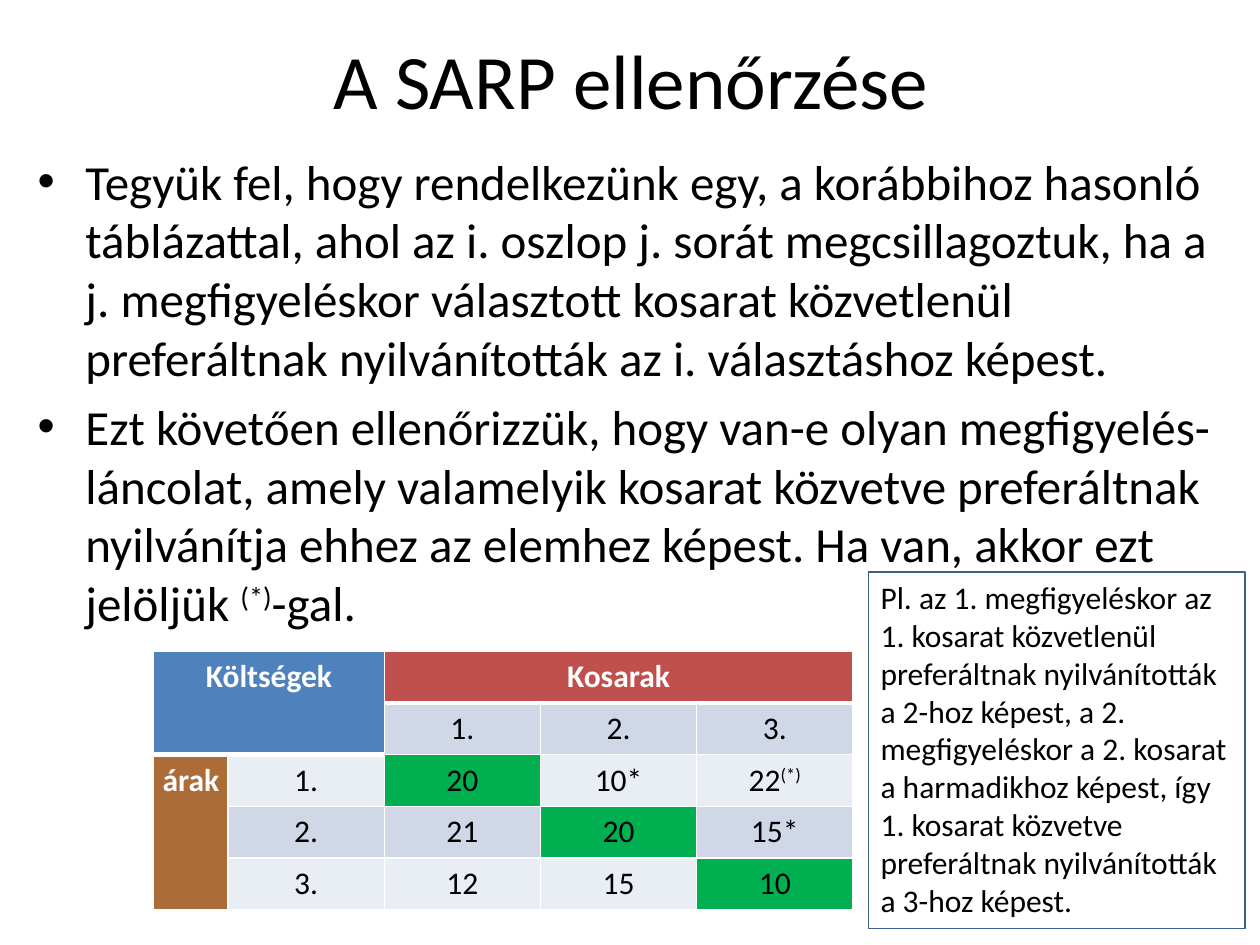
from lxml import etree
from pptx import Presentation
from pptx.dml.color import RGBColor
from pptx.enum.shapes import MSO_SHAPE
from pptx.enum.text import MSO_ANCHOR, PP_ALIGN
from pptx.oxml.ns import qn
from pptx.util import Inches, Pt

RECTANGLE = MSO_SHAPE.RECTANGLE
TOP, MIDDLE = MSO_ANCHOR.TOP, MSO_ANCHOR.MIDDLE
LEFT, CENTER = PP_ALIGN.LEFT, PP_ALIGN.CENTER

FONT = "Calibri"
BLACK = RGBColor(0x00, 0x00, 0x00)
WHITE = RGBColor(0xFF, 0xFF, 0xFF)
BLUE = RGBColor(0x4F, 0x81, 0xBD)
RED = RGBColor(0xC0, 0x50, 0x4D)
BROWN = RGBColor(0x98, 0x48, 0x07)
GREEN = RGBColor(0x00, 0xB0, 0x50)
BANDS = (RGBColor(0xE9, 0xED, 0xF4), RGBColor(0xD0, 0xD8, 0xE8))
NOTE_LINE = RGBColor(0x3A, 0x5F, 0x8C)

INDIRECT = "(*)"
TITLE = "A SARP ellenőrzése"
BULLETS = (
    "Tegyük fel, hogy rendelkezünk egy, a korábbihoz hasonló táblázattal, ahol az "
    "i. oszlop j. sorát megcsillagoztuk, ha a j. megfigyeléskor választott kosarat "
    "közvetlenül preferáltnak nyilvánították az i. választáshoz képest.",
    "Ezt követően ellenőrizzük, hogy van-e olyan megfigyelés-láncolat, amely "
    "valamelyik kosarat közvetve preferáltnak nyilvánítja ehhez az elemhez képest. "
    "Ha van, akkor ezt jelöljük (*)-gal.",
)
NOTE = (
    "Pl. az 1. megfigyeléskor az 1. kosarat közvetlenül preferáltnak nyilvánították "
    "a 2-hoz képest, a 2. megfigyeléskor a 2. kosarat a harmadikhoz képest, így "
    "1. kosarat közvetve preferáltnak nyilvánították a 3-hoz képest."
)
COSTS = (
    ("Költségek", "", "Kosarak", "", ""),
    ("", "", "1.", "2.", "3."),
    ("árak", "1.", "20", "10*", "22(*)"),
    ("", "2.", "21", "20", "15*"),
    ("", "3.", "12", "15", "10"),
)
COL_WIDTHS = (0.59, 1.24, 1.24, 1.24, 1.24)
ROW_HEIGHT = 0.41


def write(p, text, size, color=BLACK, bold=False, align=LEFT):
    """Fill a paragraph, raising the indirect preference mark."""
    p.alignment = align
    for part in text.partition(INDIRECT):
        if not part:
            continue
        r = p.add_run()
        r.text = part
        r.font.name, r.font.size, r.font.bold = FONT, Pt(size), bold
        r.font.color.rgb = color
        if part == INDIRECT:
            r.font._element.set("baseline", "30000")


def add_text_box(slide, box, anchor=TOP):
    tf = slide.shapes.add_textbox(*map(Inches, box)).text_frame
    tf.word_wrap = True
    tf.vertical_anchor = anchor
    return tf


def add_title(slide, box):
    write(add_text_box(slide, box, MIDDLE).paragraphs[0], TITLE, 44, align=CENTER)


def add_bullets(slide, box):
    tf = add_text_box(slide, box)
    for i, text in enumerate(BULLETS):
        p = tf.add_paragraph() if i else tf.paragraphs[0]
        write(p, text, 28)
        p.space_before = Pt(5.6)
        pPr = p._p.get_or_add_pPr()
        pPr.set("marL", str(Inches(0.38)))
        pPr.set("indent", str(Inches(-0.38)))
        etree.SubElement(pPr, qn("a:buFont"), typeface="Arial")
        etree.SubElement(pPr, qn("a:buChar"), char="•")


def set_borders(cell, top, bottom):
    tcPr = cell._tc.get_or_add_tcPr()
    for side, width in (("L", 1), ("R", 1), ("T", top), ("B", bottom)):
        ln = etree.SubElement(tcPr, qn(f"a:ln{side}"), w=str(Pt(width)))
        fill = etree.SubElement(ln, qn("a:solidFill"))
        etree.SubElement(fill, qn("a:srgbClr"), val=str(WHITE))


def cell_fill(row, col):
    if row < 2 and col < 2:
        return BLUE
    if row == 0:
        return RED
    if col == 0:
        return BROWN
    return GREEN if row == col else BANDS[row % 2]


def add_cost_table(slide, left, top):
    size = len(COSTS)
    table = slide.shapes.add_table(
        size, size, Inches(left), Inches(top),
        Inches(sum(COL_WIDTHS)), Inches(ROW_HEIGHT * size)).table
    for col, width in zip(table.columns, COL_WIDTHS):
        col.width = Inches(width)
    for i, texts in enumerate(COSTS):
        table.rows[i].height = Inches(ROW_HEIGHT)
        for j, text in enumerate(texts):
            cell = table.cell(i, j)
            header_end = 1 if j < 2 else 0
            set_borders(cell, 3 if i == header_end + 1 else 1,
                        3 if i == header_end else 1)
            color = cell_fill(i, j)
            cell.fill.solid()
            cell.fill.fore_color.rgb = color
            if color == BROWN:
                rgb = cell._tc.tcPr.find(f"{qn('a:solidFill')}/{qn('a:srgbClr')}")
                etree.SubElement(rgb, qn("a:alpha"), val="80000")
            cell.margin_left = cell.margin_right = Inches(0.05)
            cell.margin_top = cell.margin_bottom = Inches(0.05)
            header = color in (BLUE, RED, BROWN)
            write(cell.text_frame.paragraphs[0], text, 18,
                  WHITE if header else BLACK, header, CENTER)
    for first, last in (((0, 0), (1, 1)), ((0, 2), (0, 4)), ((2, 0), (4, 0))):
        table.cell(*first).merge(table.cell(*last))


def add_note(slide, box):
    s = slide.shapes.add_shape(RECTANGLE, *map(Inches, box))
    s.shadow.inherit = False
    s.fill.background()
    s.line.color.rgb = NOTE_LINE
    s.line.width = Pt(0.75)
    tf = s.text_frame
    tf.word_wrap = True
    tf.vertical_anchor = TOP
    write(tf.paragraphs[0], NOTE, 18)


def main():
    prs = Presentation()
    prs.slide_width, prs.slide_height = Inches(10), Inches(7.5)
    slide = prs.slides.add_slide(prs.slide_layouts[6])
    add_title(slide, (0.51, 0, 9, 1.25))
    add_bullets(slide, (0.2, 1.15, 9.53, 5.55))
    add_cost_table(slide, 1.22, 5.17)
    add_note(slide, (6.89, 4.54, 2.99, 2.83))
    prs.save("out.pptx")


if __name__ == "__main__":
    main()
